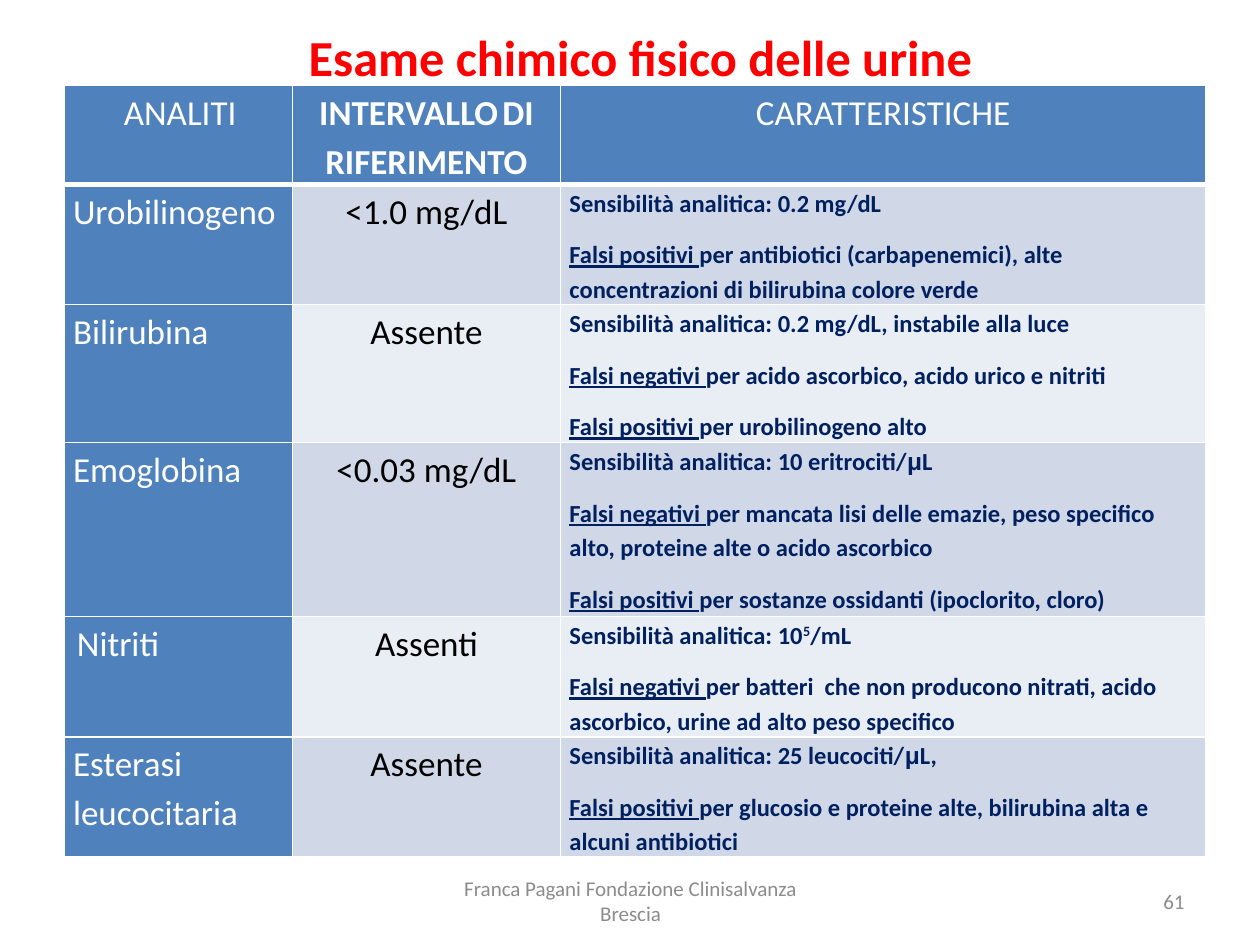
from lxml import etree
from pptx import Presentation
from pptx.dml.color import RGBColor
from pptx.enum.text import MSO_ANCHOR, PP_ALIGN
from pptx.oxml.ns import qn
from pptx.util import Inches, Pt

LEFT, MID, RIGHT = PP_ALIGN.LEFT, PP_ALIGN.CENTER, PP_ALIGN.RIGHT
CENTRE = MSO_ANCHOR.MIDDLE
WHITE = RGBColor(0xFF, 0xFF, 0xFF)
BLACK = RGBColor(0, 0, 0)
RED = RGBColor(0xFF, 0, 0)
GREY = RGBColor(0x8C, 0x8C, 0x8C)
NAVY = RGBColor(0, 0x20, 0x60)
BLUE = RGBColor(0x4F, 0x81, 0xBD)
BANDS = RGBColor(0xD0, 0xD8, 0xE8), RGBColor(0xE9, 0xED, 0xF4)

GAP = (" ", {"size": 10})
MICRO = ("μ", {"face": "Arial"})
POS = ("Falsi positivi ", {"under": True})
NEG = ("Falsi negativi ", {"under": True})
SENS = "Sensibilità analitica: "

COLS = [1.81, 2.13, 5.12]
ROWS = [0.77, 0.81, 1.09, 1.38, 0.54, 0.85]
HEAD = [
    ([GAP, "ANALITI"], False),
    (["INTERVALLO", GAP, "DI RIFERIMENTO"], True),
    (["CARATTERISTICHE"], False),
]
BODY = [
    (["Urobilinogeno"], "<1.0 mg/dL", [
        [SENS + "0.2 mg/dL"],
        [POS, "per antibiotici (carbapenemici), alte concentrazioni di bilirubina colore verde"],
    ]),
    (["Bilirubina"], "Assente", [
        [SENS + "0.2 mg/dL, instabile alla luce"],
        [NEG, "per acido ascorbico, acido urico e nitriti"],
        [POS, "per urobilinogeno alto"],
    ]),
    (["Emoglobina"], "<0.03 mg/dL", [
        [SENS + "10 eritrociti/", MICRO, "L"],
        [NEG, "per mancata lisi delle emazie, peso specifico alto, proteine alte o acido ascorbico"],
        [POS, "per sostanze ossidanti (ipoclorito, cloro)"],
    ]),
    ([GAP, "Nitriti"], "Assenti", [
        [SENS + "10", ("5", {"base": 30}), "/mL"],
        [NEG, "per batteri  che non producono nitrati, acido ascorbico, urine ad alto peso specifico"],
    ]),
    (["Esterasi leucocitaria"], "Assente", [
        [SENS + "25 leucociti/", MICRO, "L,"],
        [POS, "per glucosio e proteine alte, bilirubina alta e alcuni antibiotici"],
    ]),
]


class Deck:
    """Holds the style and the current slide, and draws each kind of element."""

    def __init__(self, face="Calibri"):
        self.face = face
        self.show = Presentation()
        self.show.slide_width, self.show.slide_height = Inches(10), Inches(7.5)
        self.slide = self.show.slides.add_slide(self.show.slide_layouts[6])

    def span(self, para, text, size, color, bold=False, face=None, under=False, base=0):
        run = para.add_run()
        run.text = text
        font = run.font
        font.name, font.size, font.bold = face or self.face, Pt(size), bold
        font.color.rgb = color
        font.underline = under
        if base:
            run._r.get_or_add_rPr().set("baseline", str(base * 1000))

    def fill_text(self, frame, paras, align, **style):
        for i, runs in enumerate(paras):
            para = frame.add_paragraph() if i else frame.paragraphs[0]
            para.alignment = align
            for item in runs:
                text, extra = (item, {}) if isinstance(item, str) else item
                self.span(para, text, **{**style, **extra})

    def label(self, area, text, align, **style):
        box = self.slide.shapes.add_textbox(*map(Inches, area))
        frame = box.text_frame
        frame.word_wrap, frame.vertical_anchor = True, CENTRE
        self.fill_text(frame, [[text]], align, **style)

    def table(self, left, top, cols, rows):
        shape = self.slide.shapes.add_table(
            len(rows), len(cols), Inches(left), Inches(top),
            Inches(sum(cols)), Inches(sum(rows)))
        grid = shape.table
        for col, width in zip(grid.columns, cols):
            col.width = Inches(width)
        for row, height in zip(grid.rows, rows):
            row.height = Inches(height)
        return grid

    def edge(self, cell, low):
        props = cell._tc.get_or_add_tcPr()
        for side, width in (("L", 1), ("R", 1), ("T", 1), ("B", low)):
            line = etree.SubElement(props, qn("a:ln" + side), w=str(Pt(width)))
            fill = etree.SubElement(line, qn("a:solidFill"))
            etree.SubElement(fill, qn("a:srgbClr"), val=str(WHITE))

    def cell(self, cell, paras, fill, align, low=1, **style):
        self.edge(cell, low)
        cell.fill.solid()
        cell.fill.fore_color.rgb = fill
        cell.margin_left = cell.margin_right = Inches(0.07)
        cell.margin_top = cell.margin_bottom = 0
        self.fill_text(cell.text_frame, paras, align, **style)
        for para in cell.text_frame.paragraphs:
            para.line_spacing, para.space_after = 1.15, Pt(10)


def main():
    deck = Deck()
    grid = deck.table(0.51, 0.68, COLS, ROWS)
    for col, (runs, bold) in enumerate(HEAD):
        deck.cell(grid.cell(0, col), [runs], BLUE, MID, low=3,
                  size=20, color=WHITE, bold=bold)
    for row, (name, norm, notes) in enumerate(BODY, 1):
        band = BANDS[(row - 1) % 2]
        deck.cell(grid.cell(row, 0), [name], BLUE, LEFT, size=20, color=WHITE)
        deck.cell(grid.cell(row, 1), [[norm]], band, MID, size=20, color=BLACK)
        deck.cell(grid.cell(row, 2), notes, band, LEFT, size=14, color=NAVY, bold=True)
    deck.label((0.75, 0.13, 8.67, 0.63), "Esame chimico fisico delle urine", MID,
               size=28.8, color=RED, bold=True)
    deck.label((3.42, 6.95, 3.17, 0.4), "Franca Pagani Fondazione Clinisalvanza Brescia",
               MID, size=12, color=GREY)
    deck.label((7.17, 6.95, 2.33, 0.4), "61", RIGHT, size=12, color=GREY)
    deck.show.save("out.pptx")


if __name__ == "__main__":
    main()
